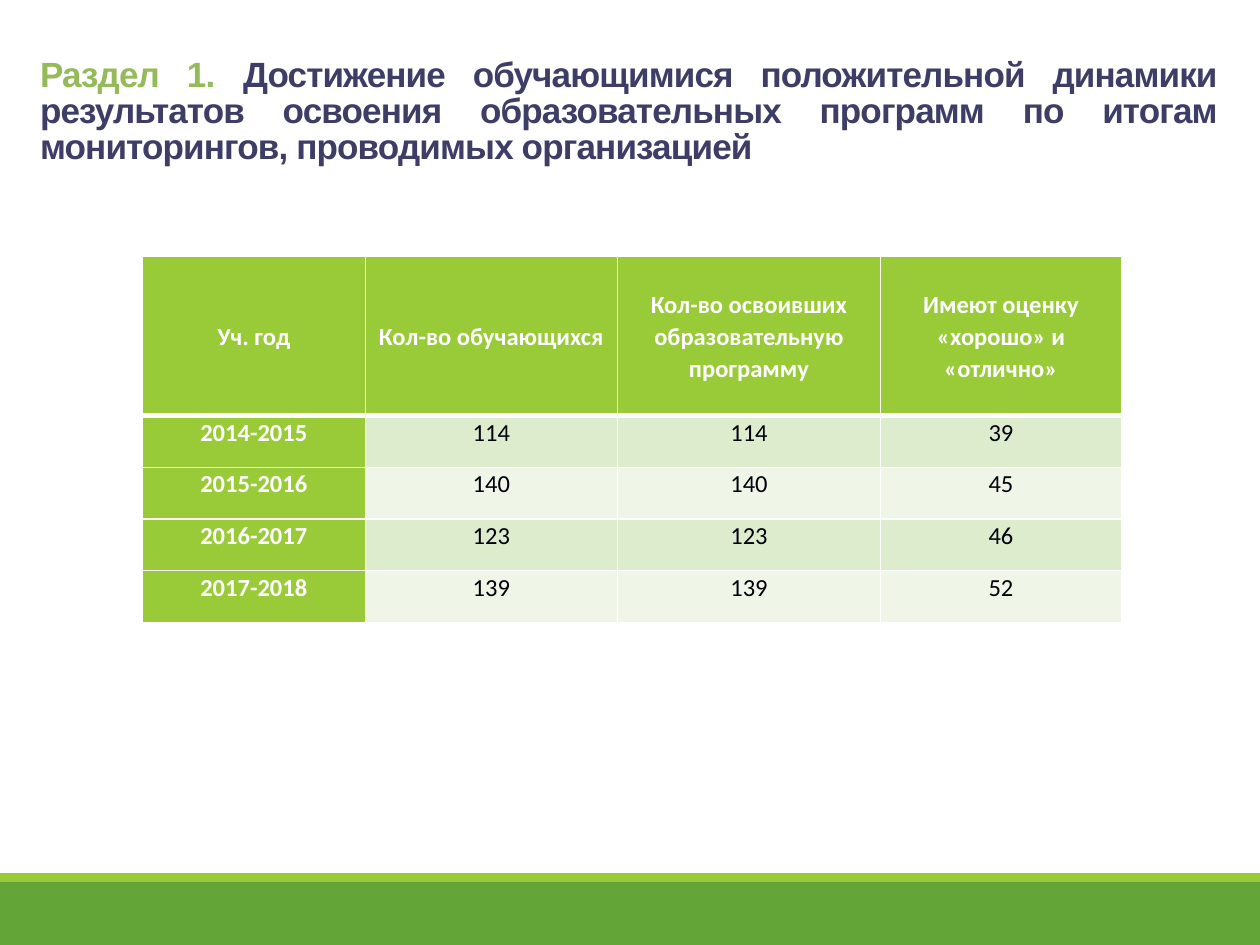
"""Build a slide with a table of learning results by school year."""
from lxml import etree
from pptx import Presentation
from pptx.dml.color import RGBColor
from pptx.enum.shapes import MSO_SHAPE
from pptx.enum.text import MSO_ANCHOR, PP_ALIGN
from pptx.oxml.ns import qn
from pptx.util import Inches, Pt

RECTANGLE = MSO_SHAPE.RECTANGLE
CENTER, JUSTIFY = PP_ALIGN.CENTER, PP_ALIGN.JUSTIFY
MIDDLE, TOP = MSO_ANCHOR.MIDDLE, MSO_ANCHOR.TOP
WHITE, LIME, GREEN, INK = "FFFFFF", "99CB38", "63A537", "00000A"
BANDS = ["DEECCE", "EFF6E8"]


def color(value):
    return RGBColor.from_string(value)


def add_span(para, text, font, size, tint, bold):
    span = para.add_run()
    span.text = text
    span.font.name = font
    span.font.size = Pt(size)
    span.font.bold = bold
    span.font.color.rgb = color(tint)
    return span


deck = Presentation()
deck.slide_width, deck.slide_height = Inches(10), Inches(7.5)
page = deck.slides.add_slide(deck.slide_layouts[6])

for top, height, tint in [(7, 0.5, GREEN), (6.93, 0.07, LIME)]:
    band = page.shapes.add_shape(RECTANGLE, 0, Inches(top), deck.slide_width, Inches(height))
    band.shadow.inherit = False
    band.fill.solid()
    band.fill.fore_color.rgb = color(tint)
    band.line.fill.background()

widths = [1.77, 2, 2.09, 1.91]
heights = [1.27] + [0.41] * 4
rows = [
    ["Уч. год", "Кол-во обучающихся", "Кол-во освоивших образовательную программу",
     "Имеют оценку «хорошо» и «отлично»"],
    ["2014-2015", "114", "114", "39"],
    ["2015-2016", "140", "140", "45"],
    ["2016-2017", "123", "123", "46"],
    ["2017-2018", "139", "139", "52"],
]
table = page.shapes.add_table(
    len(rows), len(widths), Inches(1.13), Inches(2.03),
    Inches(sum(widths)), Inches(sum(heights))).table
for column, width in zip(table.columns, widths):
    column.width = Inches(width)
for row, height in zip(table.rows, heights):
    row.height = Inches(height)

for row, texts in enumerate(rows):
    for column, text in enumerate(texts):
        cell = table.cell(row, column)
        heading = row == 0 or column == 0
        cell.margin_left = cell.margin_right = Inches(0.07)
        cell.margin_top = cell.margin_bottom = 0
        cell.vertical_anchor = MIDDLE if row == 0 else TOP
        properties = cell._tc.get_or_add_tcPr()
        for side in "LRTB":
            thick = (row, side) in [(0, "B"), (1, "T")]
            edge = etree.SubElement(properties, qn(f"a:ln{side}"), w=str(Pt(3 if thick else 1)))
            fill = etree.SubElement(edge, qn("a:solidFill"))
            etree.SubElement(fill, qn("a:srgbClr"), val=WHITE)
        cell.fill.solid()
        cell.fill.fore_color.rgb = color(LIME if heading else BANDS[(row - 1) % 2])
        para = cell.text_frame.paragraphs[0]
        para.alignment = CENTER
        para.line_spacing = 1.07
        add_span(para, text, "Calibri", 14, WHITE if heading else INK, heading)

box = page.shapes.add_textbox(Inches(0.22), Inches(0.42), Inches(9.53), Inches(1.08))
box.text_frame.word_wrap = True
para = box.text_frame.paragraphs[0]
para.alignment = JUSTIFY
para.line_spacing = 0.85
for text, tint in [
    ("Раздел 1. ", "95BA59"),
    ("Достижение обучающимися положительной динамики результатов освоения "
     "образовательных программ по итогам мониторингов, проводимых организацией", "3D3D66"),
]:
    span = add_span(para, text, "Arial", 20, tint, True)
    span.font._element.set("spc", "-50")

deck.save("out.pptx")
